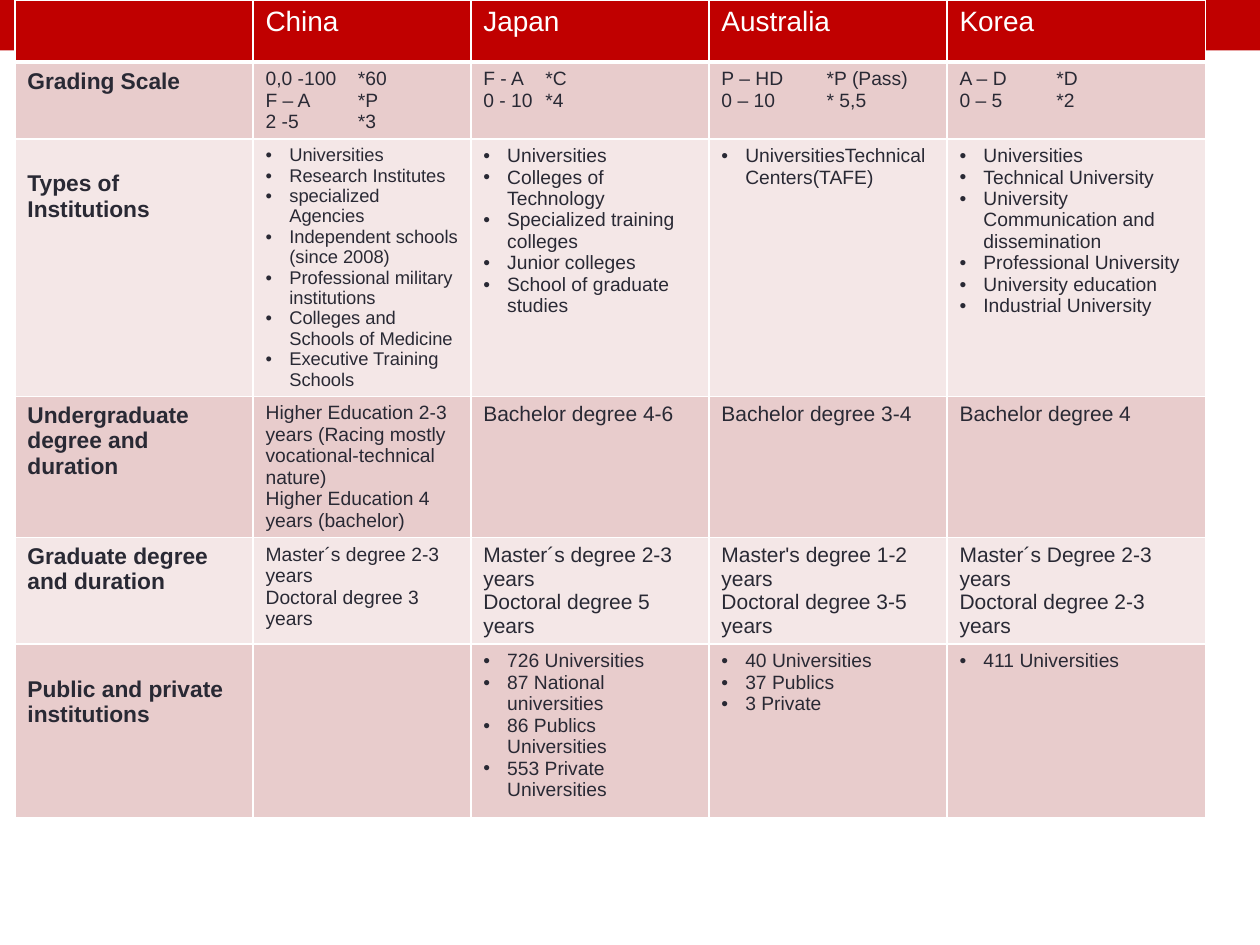
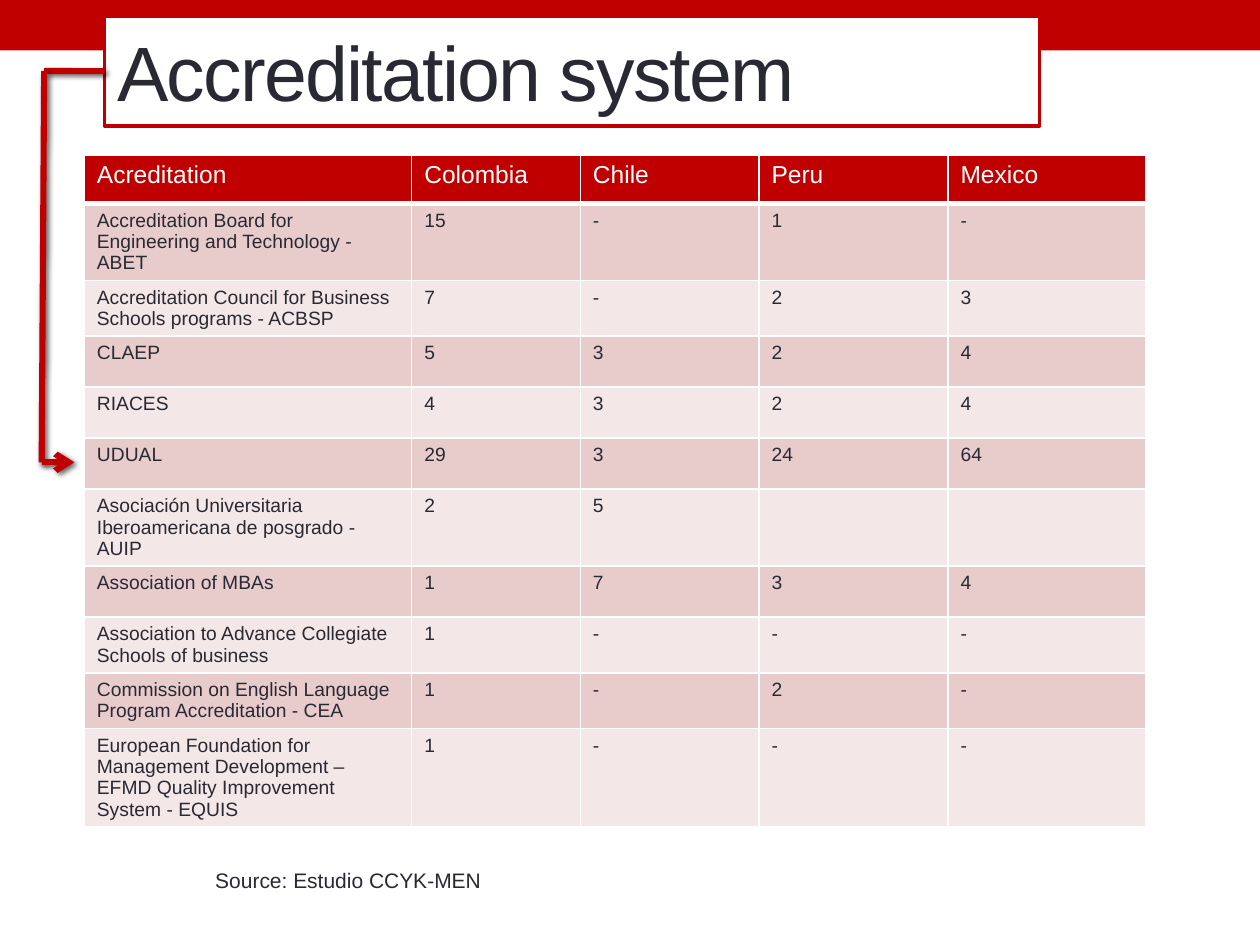
from dataclasses import dataclass
from itertools import pairwise

from lxml import etree
from pptx import Presentation
from pptx.dml.color import RGBColor
from pptx.enum.shapes import MSO_CONNECTOR, MSO_SHAPE
from pptx.enum.text import MSO_ANCHOR
from pptx.oxml import parse_xml
from pptx.oxml.ns import nsdecls, qn
from pptx.util import Cm, Pt

RECTANGLE = MSO_SHAPE.RECTANGLE
STRAIGHT = MSO_CONNECTOR.STRAIGHT
MIDDLE = MSO_ANCHOR.MIDDLE
LEFT_SIDE = 1


@dataclass(frozen=True)
class Theme:
    font: str = "Arial"
    red: RGBColor = RGBColor(0xC0, 0x00, 0x00)
    white: RGBColor = RGBColor(0xFF, 0xFF, 0xFF)
    ink: RGBColor = RGBColor(0x29, 0x29, 0x34)
    bands: tuple = (RGBColor(0xE8, 0xCC, 0xCC), RGBColor(0xF4, 0xE7, 0xE7))
    title: float = 44
    country: float = 16
    accreditation_head: float = 14
    label: float = 13
    note: float = 12
    body: float = 11
    dense: float = 10.5


THEME = Theme()


def write(frame, text, size, color=THEME.ink, bold=False, bullet=False, tab=None, tracking=None):
    """Fill a text frame, one paragraph per line; tab is a stop in cm, tracking is in points."""
    frame.word_wrap = True
    for index, line in enumerate(text.split("\n")):
        paragraph = frame.paragraphs[0] if index == 0 else frame.add_paragraph()
        properties = paragraph._p.get_or_add_pPr()
        if bullet:
            properties.set("marL", str(Cm(0.48)))
            properties.set("indent", str(-Cm(0.48)))
            etree.SubElement(properties, qn("a:buFont")).set("typeface", THEME.font)
            etree.SubElement(properties, qn("a:buChar")).set("char", "•")
        if tab and "\t" in line:
            stops = etree.SubElement(properties, qn("a:tabLst"))
            stop = etree.SubElement(stops, qn("a:tab"))
            stop.set("pos", str(Cm(tab)))
            stop.set("algn", "l")
        run = paragraph.add_run()
        run.text = line
        run.font.name = THEME.font
        run.font.size = Pt(size)
        run.font.bold = bold
        run.font.color.rgb = color
        if tracking:
            run.font._element.set("spc", str(tracking * 100))


def add_grid(slide, left, top, widths, heights, heads, head_size):
    """Add a table with a red head row, alternating bands and white rules; lengths in cm."""
    grid = slide.shapes.add_table(
        len(heights), len(widths), Cm(left), Cm(top), Cm(sum(widths)), Cm(sum(heights))
    ).table
    for column, width in zip(grid.columns, widths):
        column.width = Cm(width)
    for row_index, (row, height) in enumerate(zip(grid.rows, heights)):
        row.height = Cm(height)
        for cell in row.cells:
            for side in "LRTB":
                rule = 3 if row_index == 0 and side == "B" else 1
                cell._tc.get_or_add_tcPr().append(parse_xml(
                    f'<a:ln{side} {nsdecls("a")} w="{Pt(rule)}"><a:solidFill>'
                    f'<a:srgbClr val="{THEME.white}"/></a:solidFill></a:ln{side}>'
                ))
            cell.fill.solid()
            cell.fill.fore_color.rgb = THEME.bands[(row_index - 1) % 2] if row_index else THEME.red
    for cell, head in zip(grid.rows[0].cells, heads):
        if head:
            write(cell.text_frame, head, head_size, THEME.white)
    return grid


deck = Presentation()
deck.slide_width, deck.slide_height = Cm(25.4), Cm(19.05)
blank = deck.slide_layouts[6]
comparison, accreditation = slides = [deck.slides.add_slide(blank) for _ in range(2)]
for slide in slides:
    band = slide.shapes.add_shape(RECTANGLE, 0, 0, deck.slide_width, Cm(1.02))
    band.shadow.inherit = False
    band.fill.solid()
    band.fill.fore_color.rgb = THEME.red
    band.line.fill.background()

# Slide 1: higher education in four countries
# Each topic: label, row height, China size, size elsewhere, bullets, label top margin, cells
LABEL_TOP, LOWERED_TOP = 0.13, 0.65
topics = [
    ("Grading Scale", 1.55, THEME.body, THEME.body, False, LABEL_TOP, [
        "0,0 -100\t*60\nF – A\t*P\n2 -5\t*3",
        "F - A\t*C\n0 - 10\t*4",
        "P – HD\t*P (Pass)\n0 – 10\t* 5,5",
        "A – D\t*D\n0 – 5\t*2",
    ]),
    ("Types of Institutions", 5.18, THEME.dense, THEME.body, True, LOWERED_TOP, [
        "Universities\nResearch Institutes\nspecialized Agencies\n"
        "Independent schools (since 2008)\nProfessional military institutions\n"
        "Colleges and Schools of Medicine\nExecutive Training Schools",
        "Universities\nColleges of Technology\nSpecialized training colleges\n"
        "Junior colleges\nSchool of graduate studies",
        "UniversitiesTechnical Centers(TAFE)",
        "Universities\nTechnical University\nUniversity Communication and dissemination\n"
        "Professional University\nUniversity education\nIndustrial University",
    ]),
    ("Undergraduate degree and duration", 2.84, THEME.body, THEME.note, False, LABEL_TOP, [
        "Higher Education 2-3 years (Racing mostly vocational-technical nature)\n"
        "Higher Education 4 years (bachelor)",
        "Bachelor degree 4-6",
        "Bachelor degree 3-4",
        "Bachelor degree 4",
    ]),
    ("Graduate degree and duration", 2.15, THEME.body, THEME.note, False, LABEL_TOP, [
        "Master´s degree 2-3 years\nDoctoral degree 3 years",
        "Master´s degree 2-3 years\nDoctoral degree 5 years",
        "Master's degree 1-2 years\nDoctoral degree 3-5 years",
        "Master´s Degree 2-3 years\nDoctoral degree 2-3 years",
    ]),
    ("Public and private institutions", 3.5, THEME.body, THEME.body, True, LOWERED_TOP, [
        "",
        "726 Universities\n87 National universities\n86 Publics Universities\n"
        "553 Private Universities",
        "40 Universities\n37 Publics\n3 Private",
        "411 Universities",
    ]),
]
grade_tabs = [1.86, 1.25, 2.12, 1.95]
countries = add_grid(
    comparison, 0.3, 0, [4.8, 4.39, 4.8, 4.8, 5.21], [1.25] + [topic[1] for topic in topics],
    ["", "China", "Japan", "Australia", "Korea"], THEME.country,
)
for row_index, topic in enumerate(topics, start=1):
    label, _, china_size, other_size, bullet, label_top, facts = topic
    label_cell = countries.cell(row_index, 0)
    label_cell.margin_top = Cm(label_top)
    write(label_cell.text_frame, label, THEME.label, bold=True)
    for column, (fact, tab) in enumerate(zip(facts, grade_tabs), start=1):
        if fact:
            size = china_size if column == 1 else other_size
            write(countries.cell(row_index, column).text_frame, fact, size, bullet=bullet, tab=tab)

# Slide 2: accreditation bodies in Latin America
title = accreditation.shapes.add_shape(RECTANGLE, Cm(2.11), Cm(0.33), Cm(18.85), Cm(2.21))
title.shadow.inherit = False
title.fill.solid()
title.fill.fore_color.rgb = THEME.white
title.line.color.rgb = THEME.red
title.line.width = Pt(2.08)
title.text_frame.vertical_anchor = MIDDLE
write(title.text_frame, "Accreditation system", THEME.title, tracking=-1)
title.text_frame.paragraphs[0].alignment = 1

# Each body: name, lines its name takes, counts per country
bodies = [
    ("Accreditation Board for Engineering and Technology - ABET", 3, ["15", "-", "1", "-"]),
    ("Accreditation Council for Business Schools programs - ACBSP", 2, ["7", "-", "2", "3"]),
    ("CLAEP", 1, ["5", "3", "2", "4"]),
    ("RIACES", 1, ["4", "3", "2", "4"]),
    ("UDUAL", 1, ["29", "3", "24", "64"]),
    ("Asociación Universitaria Iberoamericana de posgrado - AUIP", 3, ["2", "5", "", ""]),
    ("Association of MBAs", 1, ["1", "7", "3", "4"]),
    ("Association to Advance Collegiate Schools of business", 2, ["1", "-", "-", "-"]),
    ("Commission on English Language Program Accreditation - CEA", 2, ["1", "-", "2", "-"]),
    ("European Foundation for Management Development – EFMD Quality Improvement System - EQUIS",
     4, ["1", "-", "-", "-"]),
]
height_by_lines = {1: 1.03, 2: 1.12, 3: 1.55, 4: 1.97}
accreditations = add_grid(
    accreditation, 1.7, 3.12, [6.6, 3.4, 3.6, 3.81, 3.99],
    [0.98] + [height_by_lines[lines] for _, lines, _ in bodies],
    ["Acreditation", "Colombia", "Chile", "Peru", "Mexico"], THEME.accreditation_head,
)
for row_index, (name, _, counts) in enumerate(bodies, start=1):
    for column, entry in enumerate([name, *counts]):
        if entry:
            write(accreditations.cell(row_index, column).text_frame, entry, THEME.body)

# Arrow from the title down to the UDUAL row
route = [(2.11, 1.43), (0.89, 1.43), (0.84, 9.32), (1.5, 9.32)]
for start, end in pairwise(route):
    segment = accreditation.shapes.add_connector(STRAIGHT, *map(Cm, start + end))
    segment.line.color.rgb = THEME.red
    segment.line.width = Pt(3.5)
    if start == route[0]:
        segment.begin_connect(title, LEFT_SIDE)
    if end == route[-1]:
        etree.SubElement(segment.line._get_or_add_ln(), qn("a:tailEnd")).set("type", "arrow")
    segment._element.spPr.append(parse_xml(
        f'<a:effectLst {nsdecls("a")}><a:outerShdw blurRad="{Pt(3)}" dist="{Pt(2)}" dir="2700000">'
        '<a:srgbClr val="000000"><a:alpha val="60000"/></a:srgbClr></a:outerShdw></a:effectLst>'
    ))

source = accreditation.shapes.add_textbox(Cm(4.09), Cm(17.37), Cm(18.85), Cm(0.76))
write(source.text_frame, "Source: Estudio CCYK-MEN", THEME.note)

deck.save("out.pptx")
